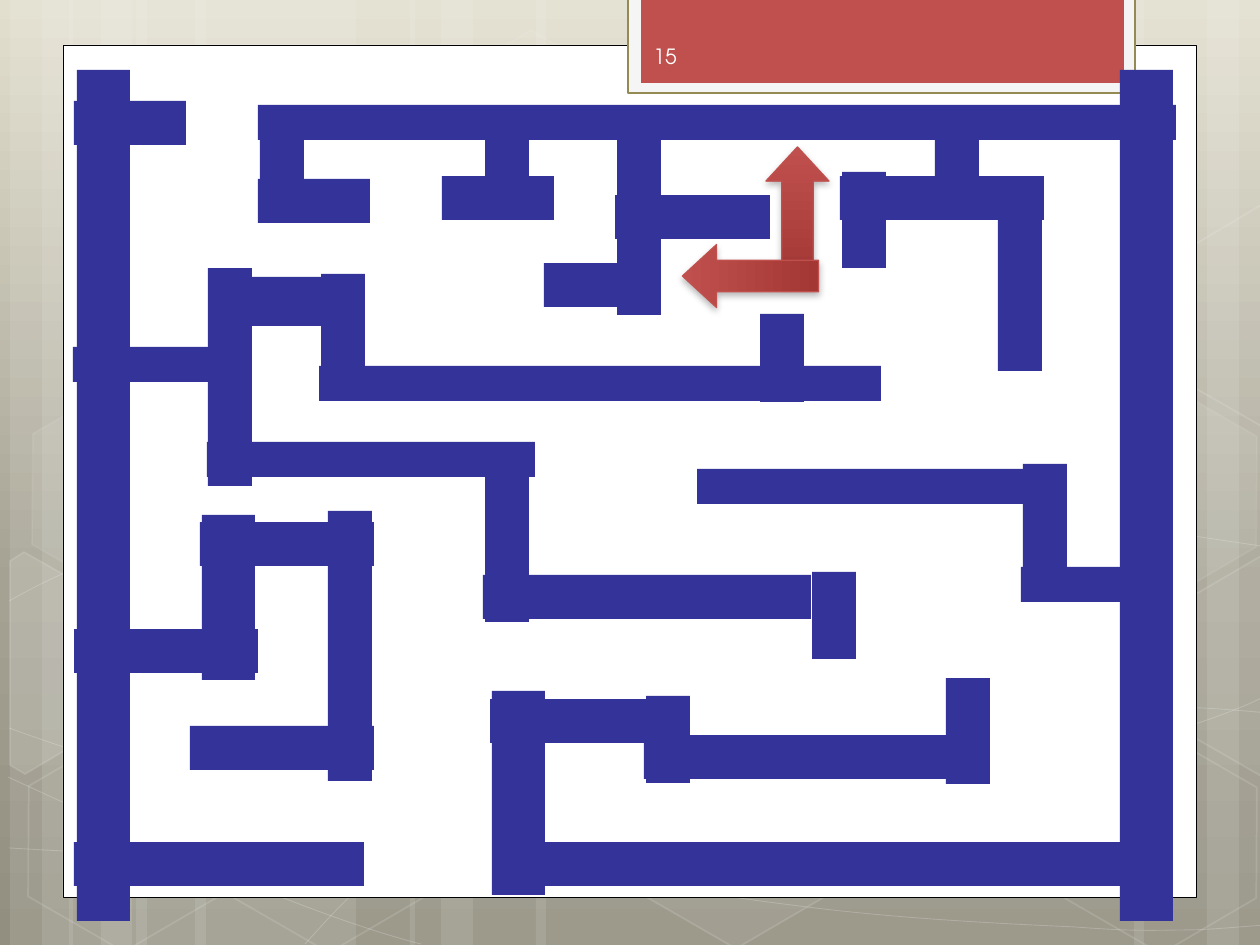
"""Build a maze slide with two direction arrows on a pale backdrop."""
import copy

import lxml.etree
import pptx
import pptx.dml.color
import pptx.enum.shapes
import pptx.enum.text
import pptx.oxml.ns
import pptx.util

RGB = pptx.dml.color.RGBColor
SHAPE = pptx.enum.shapes.MSO_SHAPE
qn = pptx.oxml.ns.qn

SCALE = 914400 / 126
WHITE = RGB(0xFF, 0xFF, 0xFF)
BLACK = RGB(0x00, 0x00, 0x00)
NAVY = RGB(0x33, 0x33, 0x99)
RED = RGB(0xC0, 0x50, 0x4D)
DARK_RED = RGB(0xA2, 0x37, 0x34)
PALE = RGB(0xF5, 0xF5, 0xF5)
OLIVE = RGB(0x94, 0x8A, 0x54)
NUMBER = RGB(0xFE, 0xFE, 0xFE)
SAND, STONE, TAUPE = RGB(0xE2, 0xDF, 0xCF), RGB(0xA5, 0xA2, 0x93), RGB(0x92, 0x8F, 0x80)
FONT = "TeX Gyre Adventor"

STRIPES = [(136, 220), (10, 63), (42, 105), (195, 220), (69, 63), (101, 105),
           (924, 220), (1207, 63), (1134, 105), (536, 388), (410, 63), (441, 105)]
CURVES = [
    [(9, 848), (77, 852), (145, 856), (239, 854), (334, 853), (451, 851), (577, 838),
     (703, 825), (882, 801), (998, 777), (1113, 753), (1231, 716), (1269, 694)],
    [(9, 601), (45, 581), (82, 562), (152, 543), (224, 524), (326, 496), (437, 488),
     (549, 479), (685, 478), (824, 488), (963, 498), (1193, 537), (1269, 547)],
    [(8, 777), (160, 847), (311, 916), (421, 944)],
    [(9, 728), (48, 742), (88, 756), (161, 776), (234, 795), (344, 827), (450, 848),
     (554, 869), (687, 892), (791, 905), (896, 919), (1008, 924), (1075, 927),
     (1140, 932), (1158, 930), (1191, 930), (1223, 929), (1246, 926), (1269, 925)],
    [(305, 944), (328, 919), (350, 893), (381, 871), (411, 848), (454, 823), (489, 805),
     (524, 788), (546, 780), (592, 767), (638, 755), (722, 738), (766, 728),
     (805, 719), (818, 719), (857, 717), (896, 713), (958, 709), (1000, 708),
     (1045, 707), (1116, 708), (1116, 708), (1150, 708), (1180, 708), (1201, 708),
     (1223, 709), (1245, 711), (1256, 712), (1268, 713), (1264, 712), (1268, 713)],
]
HEXAGONS = [(421, 45, 4, 8), (626, 742, 6, 12), (14, 745, 0, 12), (18, 393, 7, 8),
            (219, 746, 0, 12), (949, 571, 10, 12), (1051, 747, 0, 12), (1051, 396, 7, 8)]
CUT_HEXAGONS = [
    (10, [(10, 561), (24, 552), (121, 607), (120, 718), (25, 774), (10, 765)]),
    (4, [(1167, 611), (1261, 556), (1271, 562), (1271, 772), (1263, 777), (1167, 722)]),
    (0, [(1167, 261), (1261, 205), (1273, 212), (1271, 422), (1263, 427), (1167, 372)]),
]
WALLS_ACROSS = {
    35: [(319, 366, 562), (697, 469, 348), (258, 105, 918), (73, 347, 174),
         (207, 442, 328), (1021, 567, 145)],
    44: [(74, 842, 290), (483, 575, 328), (74, 629, 184), (200, 522, 174),
         (840, 176, 204), (190, 726, 184), (490, 699, 193), (519, 842, 648),
         (544, 263, 112), (644, 735, 329), (615, 195, 155), (442, 176, 112),
         (258, 179, 112), (74, 101, 112)],
    49: [(219, 277, 141)],
}
WALLS_DOWN = {
    44: [(812, 572, 87), (946, 678, 106), (842, 172, 96), (321, 274, 123),
         (208, 268, 218), (485, 462, 160), (328, 511, 270), (260, 115, 87),
         (935, 116, 83), (998, 195, 176), (646, 696, 87), (1023, 464, 126),
         (760, 314, 88), (617, 121, 194), (485, 134, 83)],
    53: [(1120, 70, 851), (77, 70, 851), (202, 515, 165), (492, 691, 204)],
}


def px(n):
    return pptx.util.Emu(round(n * SCALE))


class Canvas:
    """Hold the style and the current slide."""

    def __init__(self, s, font):
        self.s, self.font, self.shapes = s, font, s.shapes

    def gradient(self, fill, root, *stops):
        fill.gradient()
        fill.gradient_angle = 270
        gs_list = next(root.iter(qn("a:gsLst")))
        while len(gs_list) < len(stops):
            gs_list.append(copy.deepcopy(gs_list[-1]))
        for stop, (position, color) in zip(fill.gradient_stops, stops):
            stop.position, stop.color.rgb = position, color

    def paint(self, sp, fill=None, line=None, width=1, fill_alpha=100, line_alpha=100):
        sp.shadow.inherit = False
        for part, color, alpha in ((sp.fill, fill, fill_alpha),
                                   (sp.line.fill, line, line_alpha)):
            if color is None or alpha == 0:
                part.background()
                continue
            part.solid()
            part.fore_color.rgb = color
        if line is not None:
            sp.line.width = pptx.util.Pt(width)
        pr = sp._element.spPr
        for tag, alpha in (("a:solidFill", fill_alpha), ("a:ln/a:solidFill", line_alpha)):
            for clr in pr.xpath(tag + "/a:srgbClr"):
                if alpha < 100:
                    lxml.etree.SubElement(clr, qn("a:alpha"), val=str(alpha * 1000))
        return sp

    def shape(self, x, y, w, h, kind=SHAPE.RECTANGLE, **style):
        sp = self.shapes.add_shape(kind, px(x), px(y), px(w), px(h))
        return self.paint(sp, **style)

    def hexagon(self, x, y, fill_alpha, line_alpha):
        sp = self.shape(x, y, 220, 192, SHAPE.HEXAGON, fill=WHITE, line=WHITE,
                        fill_alpha=fill_alpha, line_alpha=line_alpha)
        sp.adjustments[0] = 0.285
        sp.rotation = 30

    def outline(self, points, close=True, **style):
        points = [(round(x * SCALE), round(y * SCALE)) for x, y in points]
        fb = self.shapes.build_freeform(*points[0])
        fb.add_line_segments(points[1:], close=close)
        return self.paint(fb.convert_to_shape(), **style)

    def curve(self, knots):
        sp = self.outline(knots, close=False, line=WHITE, width=0.5, line_alpha=20)
        lines = list(sp._element.iter(qn("a:lnTo")))
        for i in range(0, len(lines), 3):
            bezier = lxml.etree.SubElement(lines[i].getparent(), qn("a:cubicBezTo"))
            for line in lines[i:i + 3]:
                bezier.append(line[0])
                line.getparent().remove(line)

    def arrow(self, x, y, rotation=0):
        sp = self.shape(x, y, 63, 136, SHAPE.UP_ARROW, line=RED, width=0.75)
        sp.adjustments[0], sp.adjustments[1] = 0.5, 0.542
        sp.rotation = rotation
        pr = sp._element.spPr
        self.gradient(sp.fill, pr, (0, RED), (1, DARK_RED))
        shadow = lxml.etree.SubElement(
            pr.find(qn("a:effectLst")), qn("a:outerShdw"), blurRad=str(pptx.util.Pt(4)),
            dist=str(pptx.util.Pt(2)), dir="5400000", rotWithShape="0")
        clr = lxml.etree.SubElement(shadow, qn("a:srgbClr"), val=str(BLACK))
        lxml.etree.SubElement(clr, qn("a:alpha"), val="28000")

    def text(self, text, x, y, w, h, size=12, color=NUMBER):
        tf = self.shapes.add_textbox(px(x), px(y), px(w), px(h)).text_frame
        tf.word_wrap = True
        tf.vertical_anchor = pptx.enum.text.MSO_ANCHOR.MIDDLE
        r = tf.paragraphs[0].add_run()
        r.text = text
        r.font.name, r.font.size, r.font.color.rgb = self.font, pptx.util.Pt(size), color

    def move_to_layout(self):
        layout = self.s.slide_layout
        for sp in list(layout.placeholders):
            sp._element.getparent().remove(sp._element)
        for sp in list(self.s.shapes):
            layout.shapes._spTree.append(sp._element)

    def group(self):
        self.shapes = self.s.shapes.add_group_shape().shapes

    def ungroup(self):
        self.shapes = self.s.shapes


def draw_backdrop(c):
    c.group()
    for x, w in STRIPES:
        c.shape(x, 0, w, 945, fill=WHITE, fill_alpha=10)
    for knots in CURVES:
        c.curve(knots)
    for hexagon in HEXAGONS:
        c.hexagon(*hexagon)
    for alpha, points in CUT_HEXAGONS:
        c.outline(points, fill=WHITE, line=WHITE, fill_alpha=alpha, line_alpha=12)
    c.ungroup()
    c.shape(63, 45, 1134, 853, fill=WHITE, line=BLACK, width=0.5)
    c.shape(628, -3, 507, 96, fill=PALE, line=OLIVE, width=1.25)
    c.shape(641, -3, 483, 86, fill=RED)
    c.move_to_layout()


def draw_maze(c):
    c.group()
    for thickness, walls in WALLS_ACROSS.items():
        for x, y, length in walls:
            c.shape(x, y, length, thickness, fill=NAVY)
    for thickness, walls in WALLS_DOWN.items():
        for x, y, length in walls:
            c.shape(x, y, thickness, length, fill=NAVY)
    c.ungroup()


def main():
    prs = pptx.Presentation()
    prs.slide_width, prs.slide_height = px(1260), px(945)
    s = prs.slides.add_slide(prs.slide_layouts[6])
    c = Canvas(s, FONT)
    c.gradient(s.background.fill, s._element, (0, SAND), (0.62, STONE), (1, TAUPE))
    draw_backdrop(c)
    c.text("15", 641, 31, 184, 50)
    draw_maze(c)
    c.arrow(766, 147)
    c.arrow(719, 208, rotation=270)
    prs.save("out.pptx")


if __name__ == "__main__":
    main()
